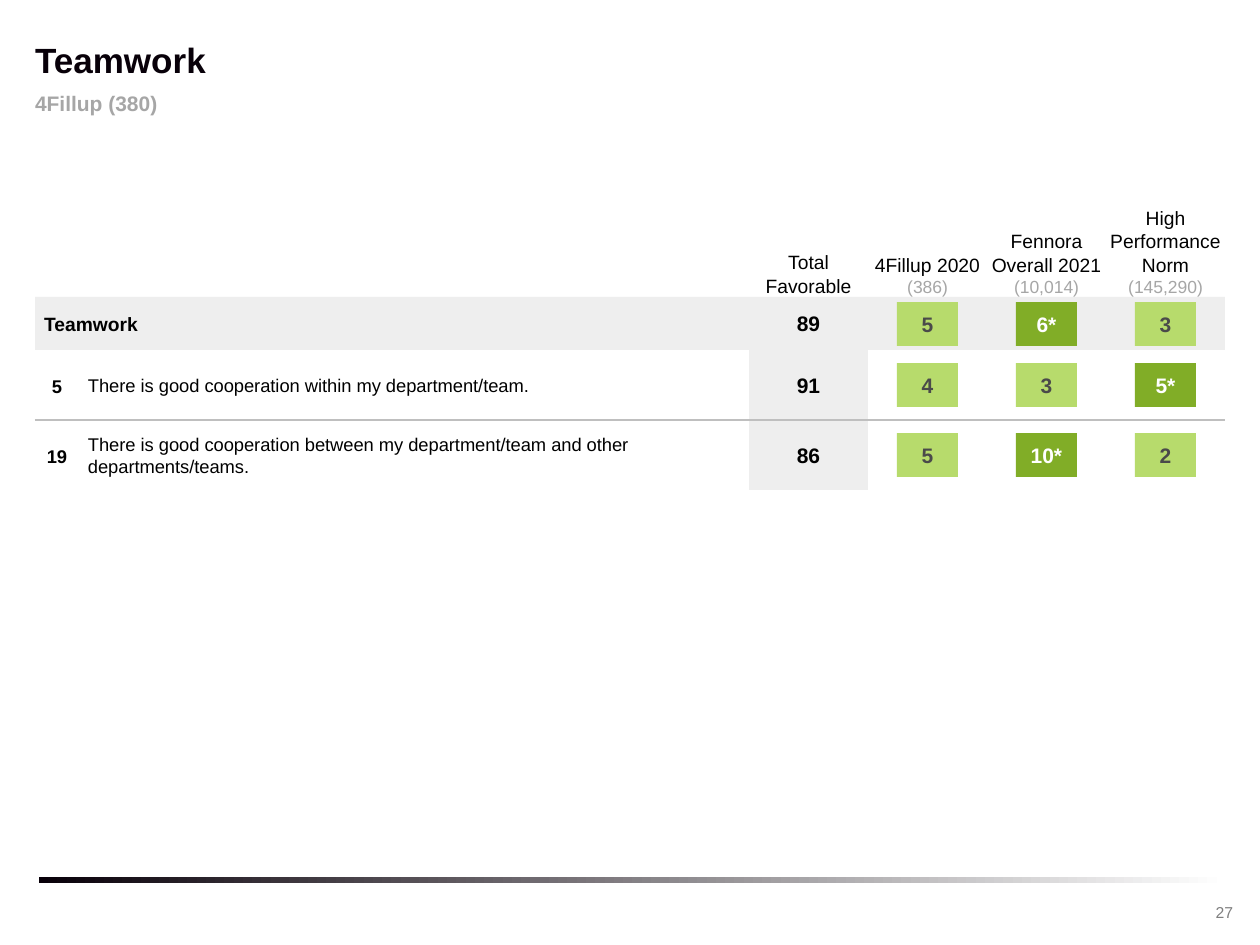
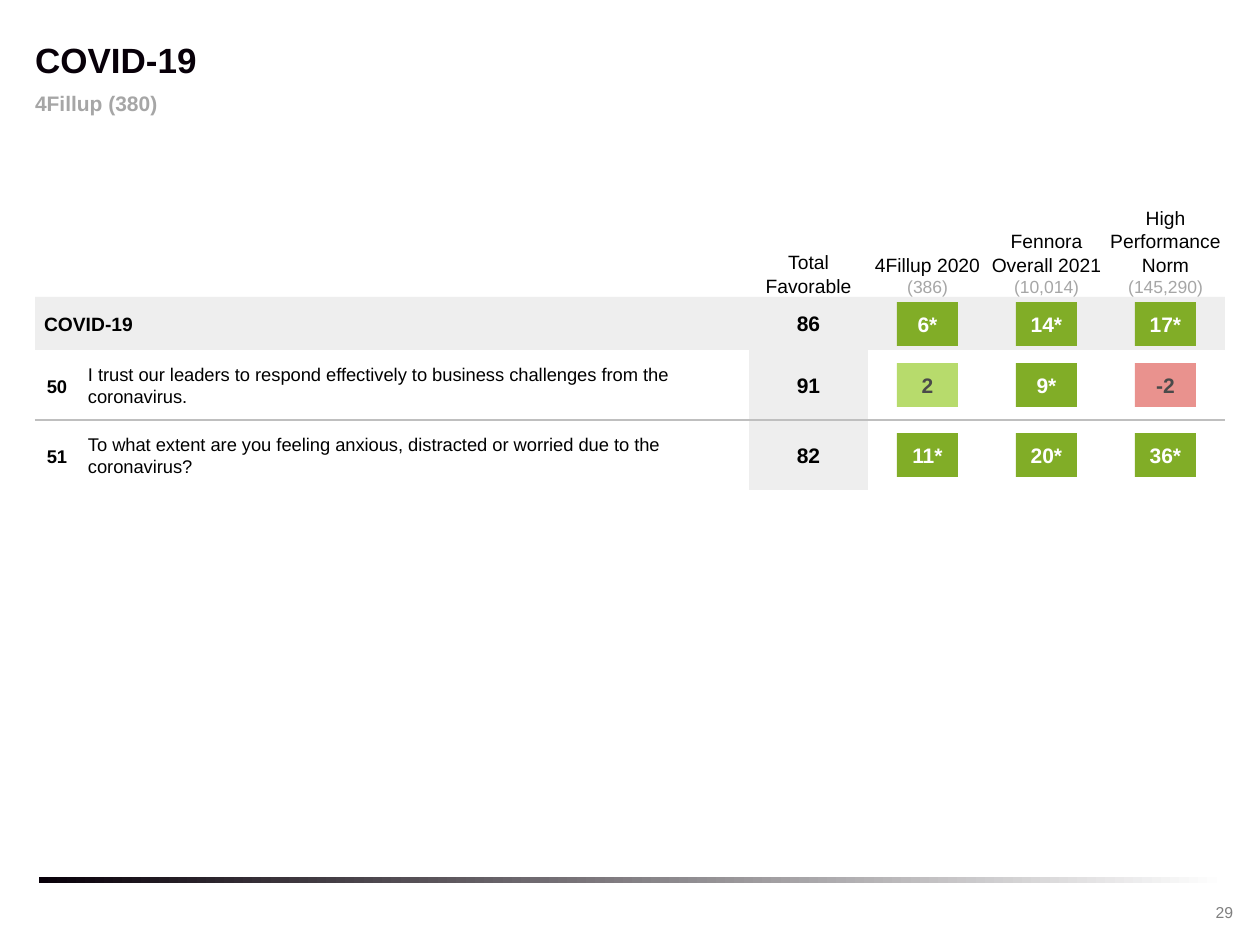
from copy import deepcopy

from lxml import etree
from pptx import Presentation
from pptx.dml.color import RGBColor
from pptx.enum.shapes import MSO_CONNECTOR, MSO_SHAPE
from pptx.enum.text import MSO_ANCHOR, PP_ALIGN
from pptx.oxml.ns import qn
from pptx.util import Emu, Pt

STRAIGHT = MSO_CONNECTOR.STRAIGHT
RECTANGLE = MSO_SHAPE.RECTANGLE
TOP, MIDDLE, BOTTOM = MSO_ANCHOR.TOP, MSO_ANCHOR.MIDDLE, MSO_ANCHOR.BOTTOM
LEFT, CENTER = PP_ALIGN.LEFT, PP_ALIGN.CENTER

FONT = "Arial"
INK = RGBColor(0x08, 0x00, 0x09)
BLACK = RGBColor(0x00, 0x00, 0x00)
WHITE = RGBColor(0xFF, 0xFF, 0xFF)
BAND = RGBColor(0xEE, 0xEE, 0xEE)
RULE = RGBColor(0xBF, 0xBF, 0xBF)
MUTED = RGBColor(0xA6, 0xA6, 0xA6)
PAGE_GREY = RGBColor(0x7F, 0x7F, 0x7F)
CHIP_TEXT = RGBColor(0x4A, 0x4A, 0x4A)
BETTER = RGBColor(0xB7, 0xDB, 0x6C)
SIGNIFICANT = RGBColor(0x81, 0xAD, 0x27)
WORSE = RGBColor(0xE9, 0x92, 0x8E)

PX = 914400 / 126
SLIDE_W, SLIDE_H = 1260, 945
MARGIN, CONTENT_W = 35, 1190
COLUMN_W = 119
TOTAL_X = 749
BENCHMARK_XS = [TOTAL_X + COLUMN_W * i for i in (1, 2, 3)]
SUMMARY_Y, SUMMARY_H = 297, 53
ROWS_Y, ROW_H = SUMMARY_Y + SUMMARY_H, 70
NUMBER_W = 44
CHIP_W, CHIP_H = 61, 44

GROUP = "4Fillup (380)"
BENCHMARKS = [
    ("4Fillup 2020", "(386)"),
    ("Fennora Overall 2021", "(10,014)"),
    ("High Performance Norm", "(145,290)"),
]
TOPICS = [
    ("Teamwork", "27", "89", ["5", "6*", "3"], [
        ("5", "There is good cooperation within my department/team.",
         "91", ["4", "3", "5*"]),
        ("19", "There is good cooperation between my department/team and "
               "other departments/teams.",
         "86", ["5", "10*", "2"]),
    ]),
    ("COVID-19", "29", "86", ["6*", "14*", "17*"], [
        ("50", "I trust our leaders to respond effectively to business "
               "challenges from the coronavirus.",
         "91", ["2", "9*", "-2"]),
        ("51", "To what extent are you feeling anxious, distracted or "
               "worried due to the coronavirus?",
         "82", ["11*", "20*", "36*"]),
    ]),
]


def px(*lengths):
    return [Emu(round(length * PX)) for length in lengths]


def chip_colors(score):
    if score.endswith("*"):
        return SIGNIFICANT, WHITE
    return (WORSE if score.startswith("-") else BETTER), CHIP_TEXT


class Report:
    def __init__(self):
        self.deck = Presentation()
        self.deck.slide_width, self.deck.slide_height = px(SLIDE_W, SLIDE_H)
        self.slide = None

    def label(self, shape, text, size, color, bold=False, align=LEFT,
              anchor=MIDDLE, insets=(0, 0, 0, 0), wrap=True):
        frame = shape.text_frame
        frame.word_wrap = wrap
        frame.vertical_anchor = anchor
        (frame.margin_left, frame.margin_top,
         frame.margin_right, frame.margin_bottom) = px(*insets)
        paragraph = frame.paragraphs[0]
        paragraph.text = text
        paragraph.alignment = align
        for run in paragraph.runs:
            run.font.name = FONT
            run.font.size = Pt(size)
            run.font.bold = bold
            run.font.color.rgb = color
        return paragraph

    def text(self, x, y, w, h, text, size, color, **style):
        box = self.slide.shapes.add_textbox(*px(x, y, w, h))
        return self.label(box, text, size, color, **style)

    def rect(self, x, y, w, h, color):
        shape = self.slide.shapes.add_shape(RECTANGLE, *px(x, y, w, h))
        shape.shadow.inherit = False
        shape.line.fill.background()
        shape.fill.solid()
        shape.fill.fore_color.rgb = color
        return shape

    def rule(self, y):
        line = self.slide.shapes.add_connector(
            STRAIGHT, *px(MARGIN, y, MARGIN + CONTENT_W, y))
        line.line.color.rgb = RULE
        line.line.width = Pt(0.75)
        etree.SubElement(line._element.spPr, qn("a:effectLst"))

    def footer(self, page):
        fill = self.rect(39, 877, 1187, 6, INK).fill
        fill.gradient()
        fill.gradient_angle = 0
        for stop, color, position in zip(fill.gradient_stops, (INK, WHITE), (0, 1)):
            stop.color.rgb = color
            stop.position = position
        self.text(1192, 897, 65, 32, page, 9, PAGE_GREY, align=CENTER,
                  anchor=TOP, insets=(13, 6, 13, 6))

    def bands(self, row_count):
        for row in range(row_count):
            self.rect(TOTAL_X, ROWS_Y + ROW_H * row, COLUMN_W, ROW_H, BAND)
        for x in [TOTAL_X] + BENCHMARK_XS:
            self.rect(x, SUMMARY_Y, COLUMN_W, SUMMARY_H, BAND)
        self.rect(MARGIN, SUMMARY_Y, TOTAL_X - MARGIN, SUMMARY_H, BAND)

    def column_heads(self):
        self.text(TOTAL_X, 157, COLUMN_W, SUMMARY_Y - 157, "Total Favorable",
                  11, BLACK, align=CENTER, anchor=BOTTOM)
        for x, (name, count) in zip(BENCHMARK_XS, BENCHMARKS):
            head = self.text(x, 122, COLUMN_W, SUMMARY_Y - 122,
                             f"{name}\v{count}", 11, BLACK,
                             align=CENTER, anchor=BOTTOM)
            name_run, count_run = head.runs
            line_break = head._p.find(qn("a:br"))
            line_break.append(deepcopy(name_run._r.find(qn("a:rPr"))))
            count_run.font.size = Pt(10)
            count_run.font.color.rgb = MUTED

    def scores(self, total_y, chip_y, total, scores):
        self.text(TOTAL_X, total_y, COLUMN_W, 25, total, 12, BLACK,
                  bold=True, align=CENTER)
        for x, score in zip(BENCHMARK_XS, scores):
            fill, ink = chip_colors(score)
            chip = self.rect(x + (COLUMN_W - CHIP_W) // 2, chip_y,
                             CHIP_W, CHIP_H, fill)
            self.label(chip, score, 12, ink, bold=True, align=CENTER,
                       insets=(0, 6, 0, 6), wrap=False)

    def question(self, y, number, wording, total, scores):
        self.text(MARGIN, y + 22, NUMBER_W, 29, number, 10.5, BLACK,
                  bold=True, align=CENTER)
        self.text(MARGIN + NUMBER_W, y + 6, 643, 58, wording, 10.5, BLACK,
                  insets=(9, 0, 44, 0))
        self.scores(y + 23, y + (ROW_H - CHIP_H) // 2, total, scores)

    def topic(self, title, page, total, scores, questions):
        self.slide = self.deck.slides.add_slide(self.deck.slide_layouts[6])
        self.footer(page)
        self.text(MARGIN, 35, CONTENT_W, 48, title, 20, INK, bold=True)
        self.bands(len(questions))
        self.text(MARGIN, 90, CONTENT_W, 26, GROUP, 12, MUTED, bold=True)
        self.column_heads()
        self.text(MARGIN, SUMMARY_Y, TOTAL_X - MARGIN, SUMMARY_H, title, 11,
                  BLACK, bold=True, insets=(9, 0, 9, 0))
        self.scores(SUMMARY_Y + 14, SUMMARY_Y + 5, total, scores)
        for row, question in enumerate(questions):
            y = ROWS_Y + ROW_H * row
            if row:
                self.rule(y)
            self.question(y, *question)


def main():
    report = Report()
    for topic in TOPICS:
        report.topic(*topic)
    report.deck.save("out.pptx")


if __name__ == "__main__":
    main()
